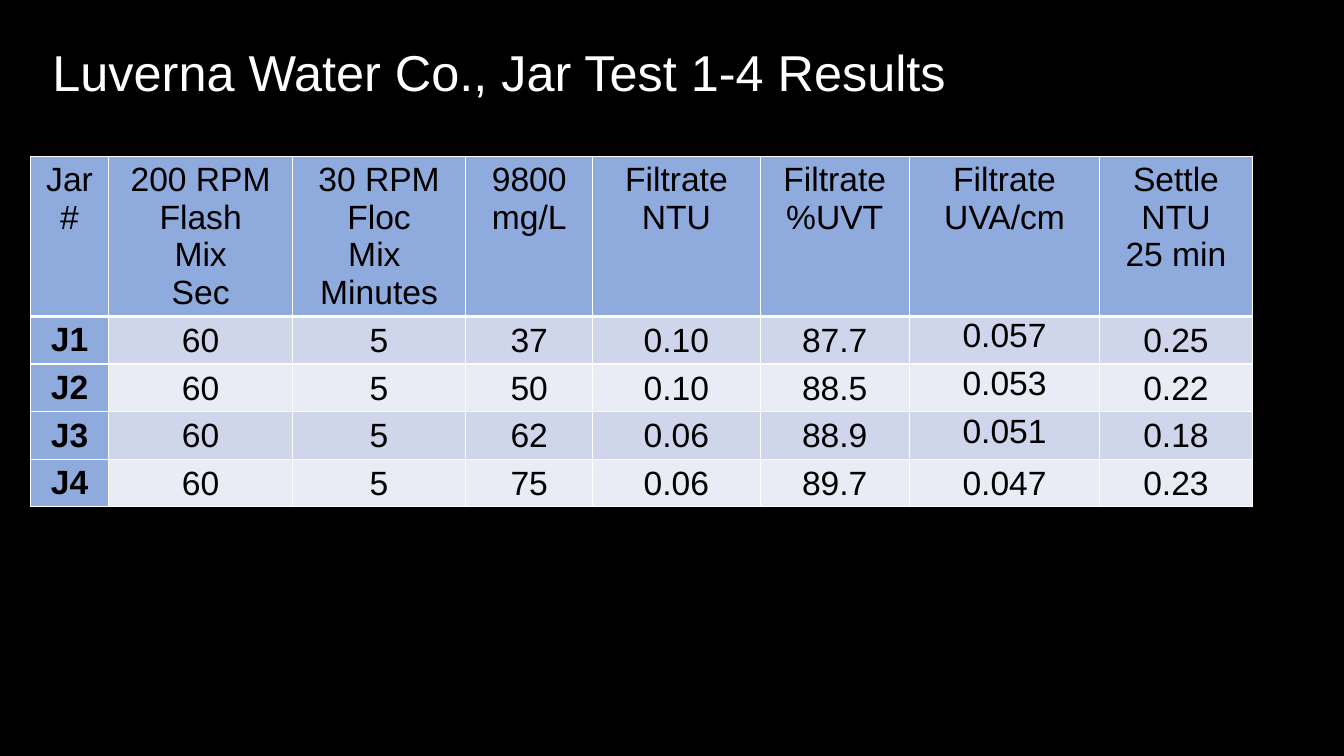
from dataclasses import dataclass

from lxml import etree
from pptx import Presentation
from pptx.dml.color import RGBColor
from pptx.enum.text import MSO_ANCHOR, PP_ALIGN
from pptx.oxml.ns import qn
from pptx.util import Inches, Pt

CENTER, LEFT = PP_ALIGN.CENTER, PP_ALIGN.LEFT
TOP, MIDDLE = MSO_ANCHOR.TOP, MSO_ANCHOR.MIDDLE
TITLE_ONLY_LAYOUT = 5


@dataclass(frozen=True)
class Theme:
    font: str = "Arial"
    title_size: int = 36
    table_size: int = 24
    background: str = "000000"
    title: str = "FFFFFF"
    text: str = "000000"
    border: str = "FFFFFF"
    heading_fill: str = "8FAADC"
    bands: tuple[str, str] = ("CFD5EA", "E9EBF5")


@dataclass(frozen=True)
class Column:
    heading: tuple[str, ...]
    width: float
    values: tuple[str, ...]


@dataclass(frozen=True)
class CellStyle:
    fill: str
    bold: bool = False
    anchor: MSO_ANCHOR = TOP
    tight: bool = False
    bottom_border: int = 1


THEME = Theme()
HEADING_HEIGHT, ROW_HEIGHT = 1.59, 0.47
COLUMNS = (
    Column(("Jar\n#",), 0.78, ("J1", "J2", "J3", "J4")),
    Column(("200 RPM", "Flash", "Mix", "Sec"), 1.82, ("60",) * 4),
    Column(("30 RPM", "Floc", "Mix ", "Minutes"), 1.72, ("5",) * 4),
    Column(("9800", "mg/L"), 1.26, ("37", "50", "62", "75")),
    Column(("Filtrate", "NTU"), 1.66, ("0.10", "0.10", "0.06", "0.06")),
    Column(("Filtrate", "%UVT"), 1.48, ("87.7", "88.5", "88.9", "89.7")),
    Column(("Filtrate", "UVA/cm"), 1.89, ("0.057", "0.053", "0.051", "0.047")),
    Column(("Settle", "NTU", "25 min"), 1.51, ("0.25", "0.22", "0.18", "0.23")),
)
JAR_COLUMN, UVA_COLUMN = 0, 6
ROW_COUNT = len(COLUMNS[0].values)


def add_run(paragraph, text: str, size: int, color: str, bold: bool = False) -> None:
    run = paragraph.add_run()
    run.text = text
    run.font.name = THEME.font
    run.font.size = Pt(size)
    run.font.bold = bold
    run.font.color.rgb = RGBColor.from_string(color)


def add_borders(cell, bottom_width: int) -> None:
    properties = cell._tc.get_or_add_tcPr()
    for side, width in (("L", 1), ("R", 1), ("T", 1), ("B", bottom_width)):
        line = etree.SubElement(properties, qn(f"a:ln{side}"), w=str(Pt(width)))
        fill = etree.SubElement(line, qn("a:solidFill"))
        etree.SubElement(fill, qn("a:srgbClr"), val=THEME.border)


def fill_cell(cell, paragraphs: tuple[str, ...], style: CellStyle) -> None:
    add_borders(cell, style.bottom_border)
    cell.fill.solid()
    cell.fill.fore_color.rgb = RGBColor.from_string(style.fill)
    cell.vertical_anchor = style.anchor
    if style.tight:
        cell.margin_left = cell.margin_right = cell.margin_top = Inches(0.01)
        cell.margin_bottom = Inches(0)
    frame = cell.text_frame
    for index, text in enumerate(paragraphs):
        paragraph = frame.add_paragraph() if index else frame.paragraphs[0]
        paragraph.alignment = CENTER
        for line_index, line in enumerate(text.split("\n")):
            if line_index:
                paragraph.add_line_break()
            add_run(paragraph, line, THEME.table_size, THEME.text, style.bold)


def value_style(row: int, column: int) -> CellStyle:
    if column == JAR_COLUMN:
        return CellStyle(THEME.heading_fill, bold=True)
    # The UVA values sit at the top of every row but the last
    at_top = column == UVA_COLUMN and row < ROW_COUNT - 1
    return CellStyle(THEME.bands[row % 2], anchor=TOP if at_top else MIDDLE, tight=True)


def add_title(slide, text: str) -> None:
    title = slide.shapes.title
    title.left, title.top = Inches(0.42), Inches(0.11)
    title.width, title.height = Inches(11.99), Inches(1.27)
    title.text_frame.word_wrap = True
    title.text_frame.vertical_anchor = MIDDLE
    paragraph = title.text_frame.paragraphs[0]
    paragraph.alignment = LEFT
    paragraph.line_spacing = 0.9
    add_run(paragraph, text, THEME.title_size, THEME.title)


def add_results_table(slide) -> None:
    width = sum(column.width for column in COLUMNS)
    height = HEADING_HEIGHT + ROW_COUNT * ROW_HEIGHT
    table = slide.shapes.add_table(
        ROW_COUNT + 1, len(COLUMNS), Inches(0.3), Inches(1.55), Inches(width), Inches(height)
    ).table
    for index, row in enumerate(table.rows):
        row.height = Inches(ROW_HEIGHT if index else HEADING_HEIGHT)
    heading_style = CellStyle(THEME.heading_fill, bottom_border=3)
    for column_index, column in enumerate(COLUMNS):
        table.columns[column_index].width = Inches(column.width)
        fill_cell(table.cell(0, column_index), column.heading, heading_style)
        for row, value in enumerate(column.values):
            fill_cell(table.cell(row + 1, column_index), (value,), value_style(row, column_index))


def main() -> None:
    presentation = Presentation()
    presentation.slide_width, presentation.slide_height = Inches(13.33), Inches(7.5)
    slide = presentation.slides.add_slide(presentation.slide_layouts[TITLE_ONLY_LAYOUT])

    # Black background
    slide.background.fill.solid()
    slide.background.fill.fore_color.rgb = RGBColor.from_string(THEME.background)

    # Title and jar test results
    add_title(slide, "Luverna Water Co., Jar Test 1-4 Results")
    add_results_table(slide)
    presentation.save("out.pptx")


if __name__ == "__main__":
    main()
